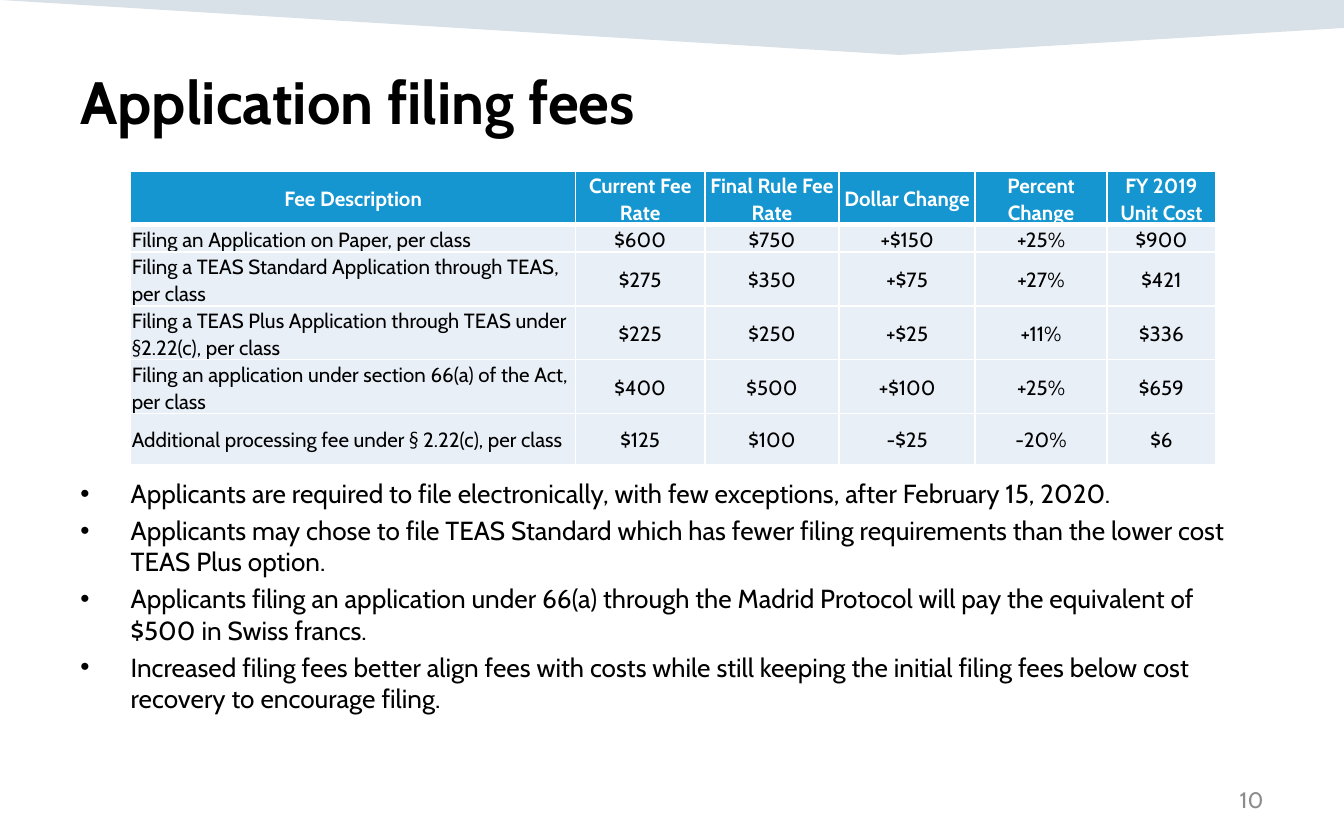
from lxml.etree import SubElement
from pptx import Presentation
from pptx.dml.color import RGBColor
from pptx.enum.text import MSO_ANCHOR, PP_ALIGN
from pptx.oxml.ns import qn
from pptx.util import Cm, Pt

FONT = "Cabin"
NAVY = RGBColor(0x00, 0x38, 0x65)
BLUE = RGBColor(0x15, 0x96, 0xD1)
PALE = RGBColor(0xE8, 0xEF, 0xF7)
WHITE = RGBColor(0xFF, 0xFF, 0xFF)
BLACK = RGBColor(0x00, 0x00, 0x00)
GRAY = RGBColor(0x8C, 0x8C, 0x8C)

# Content
TITLE = "Application filing fees"
PAGE_NUMBER = "10"
FEES = [
    ("Fee Description", "Current Fee Rate", "Final Rule Fee Rate",
     "Dollar Change", "Percent Change", "FY 2019 Unit Cost"),
    ("Filing an Application on Paper, per class",
     "$600", "$750", "+$150", "+25%", "$900"),
    ("Filing a TEAS Standard Application through TEAS, per class",
     "$275", "$350", "+$75", "+27%", "$421"),
    ("Filing a TEAS Plus Application through TEAS under §2.22(c), per class",
     "$225", "$250", "+$25", "+11%", "$336"),
    ("Filing an application under section 66(a) of the Act, per class",
     "$400", "$500", "+$100", "+25%", "$659"),
    ("Additional processing fee under § 2.22(c), per class",
     "$125", "$100", "-$25", "-20%", "$6"),
]
COLUMN_WIDTHS = [8.41, 2.44, 2.54, 2.57, 2.49, 2.06]
ROW_HEIGHTS = [0.97, 0.51, 0.97, 0.97, 0.97, 0.97]
NOTES = [
    "Applicants are required to file electronically, with few exceptions, "
    "after February 15, 2020.",
    "Applicants may chose to file TEAS Standard which has fewer filing "
    "requirements than the lower cost TEAS Plus option.",
    "Applicants filing an application under 66(a) through the Madrid Protocol "
    "will pay the equivalent of $500 in Swiss francs.",
    "Increased filing fees better align fees with costs while still keeping "
    "the initial filing fees below cost recovery to encourage filing.",
]
BAND = [(0, 0), (25.4, 0), (25.4, 0.53), (17, 1.04)]


def add_run(paragraph, text, size, color, bold=False):
    run = paragraph.add_run()
    run.text = text
    run.font.name = FONT
    run.font.size = Pt(size)
    run.font.bold = bold
    run.font.color.rgb = color


def add_frame(slide, left, top, width, height, anchor=MSO_ANCHOR.TOP):
    box = slide.shapes.add_textbox(Cm(left), Cm(top), Cm(width), Cm(height))
    frame = box.text_frame
    frame.word_wrap = True
    frame.vertical_anchor = anchor
    return frame


def set_bullet(paragraph, indent):
    properties = paragraph._p.get_or_add_pPr()
    properties.set("marL", str(indent))
    properties.set("indent", str(-indent))
    SubElement(properties, qn("a:buFont"), typeface="Arial")
    SubElement(properties, qn("a:buChar"), char="•")


def set_borders(cell, widths):
    properties = cell._tc.get_or_add_tcPr()
    for side, width in zip(("lnL", "lnR", "lnT", "lnB"), widths):
        line = SubElement(properties, qn(f"a:{side}"), w=str(Pt(width)))
        fill = SubElement(line, qn("a:solidFill"))
        SubElement(fill, qn("a:srgbClr"), val=str(WHITE))


def add_band(slide):
    builder = slide.shapes.build_freeform(Cm(BAND[0][0]), Cm(BAND[0][1]))
    builder.add_line_segments([(Cm(x), Cm(y)) for x, y in BAND[1:]], close=True)
    band = builder.convert_to_shape()
    band.shadow.inherit = False
    band.line.fill.background()
    band.fill.solid()
    band.fill.fore_color.rgb = NAVY
    color = band._element.spPr.find(qn("a:solidFill")).find(qn("a:srgbClr"))
    SubElement(color, qn("a:alpha"), val="15000")


def add_fee_table(slide):
    table = slide.shapes.add_table(
        len(FEES), len(COLUMN_WIDTHS), Cm(2.47), Cm(3.23),
        Cm(sum(COLUMN_WIDTHS)), Cm(sum(ROW_HEIGHTS))).table
    for column, width in zip(table.columns, COLUMN_WIDTHS):
        column.width = Cm(width)
    for row, height in zip(table.rows, ROW_HEIGHTS):
        row.height = Cm(height)

    for r, fee in enumerate(FEES):
        header = r == 0
        for c, text in enumerate(fee):
            cell = table.cell(r, c)
            set_borders(cell, (1, 1, 3 if r == 1 else 1, 3 if header else 1))
            cell.fill.solid()
            cell.fill.fore_color.rgb = BLUE if header else PALE
            cell.vertical_anchor = MSO_ANCHOR.MIDDLE
            cell.margin_left = cell.margin_right = cell.margin_top = Cm(0.02)
            cell.margin_bottom = 0
            paragraph = cell.text_frame.paragraphs[0]
            paragraph.alignment = PP_ALIGN.CENTER if header or c else PP_ALIGN.LEFT
            paragraph.line_spacing = 1.07
            add_run(paragraph, text, 11, WHITE if header else BLACK, header)


def main():
    presentation = Presentation()
    presentation.slide_width = Cm(25.4)
    presentation.slide_height = Cm(15.88)
    slide = presentation.slides.add_slide(presentation.slide_layouts[6])

    add_band(slide)

    # Title
    title = add_frame(slide, 1.27, 1.1, 22.86, 2.1)
    add_run(title.paragraphs[0], TITLE, 32, BLACK, bold=True)

    # Notes below the table
    notes = add_frame(slide, 1.27, 8.9, 22.86, 4.8)
    for i, note in enumerate(NOTES):
        paragraph = notes.add_paragraph() if i else notes.paragraphs[0]
        set_bullet(paragraph, Cm(0.95))
        if i:
            paragraph.space_before = Pt(3)
        add_run(paragraph, note, 14, BLACK)

    add_fee_table(slide)

    # Page number
    page_number = add_frame(slide, 18.21, 14.7, 5.92, 0.85, MSO_ANCHOR.MIDDLE)
    page_number.paragraphs[0].alignment = PP_ALIGN.RIGHT
    add_run(page_number.paragraphs[0], PAGE_NUMBER, 12, GRAY)

    presentation.save("out.pptx")


if __name__ == "__main__":
    main()
